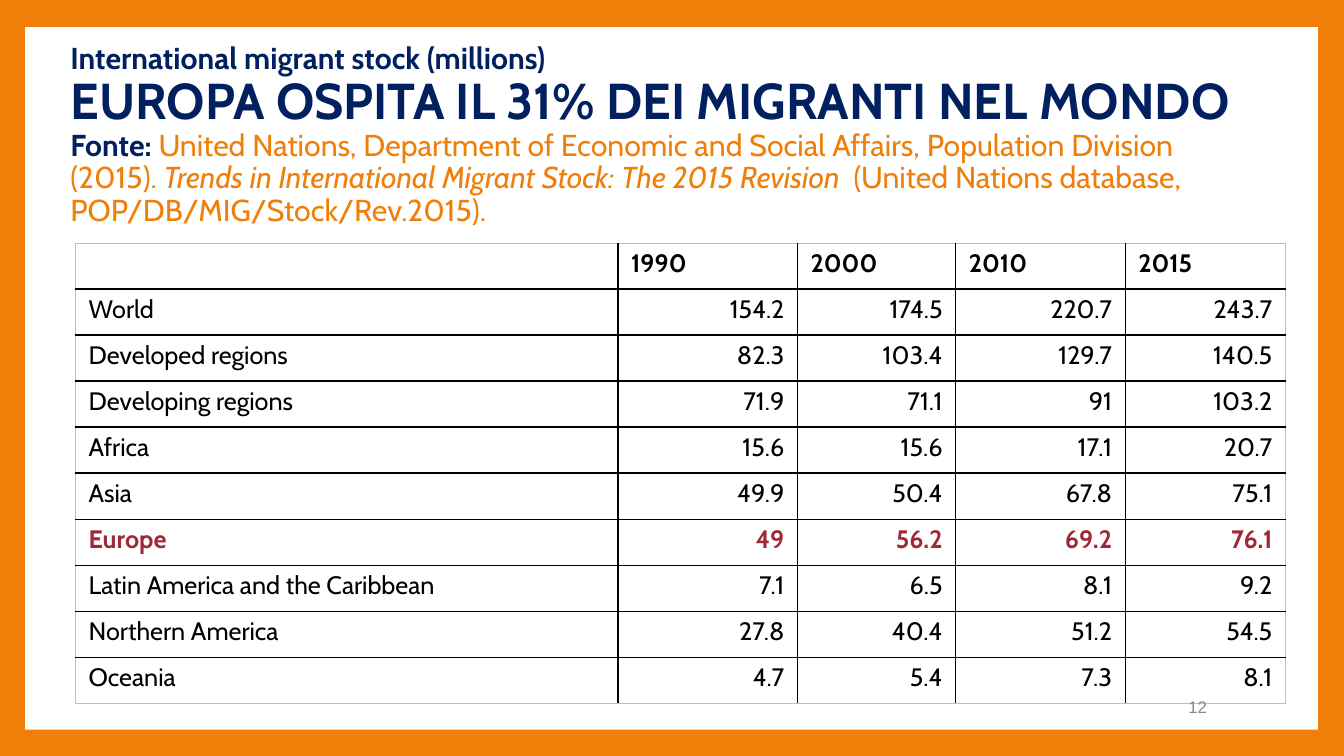
from lxml.etree import SubElement
from pptx import Presentation
from pptx.dml.color import RGBColor
from pptx.enum.shapes import MSO_SHAPE
from pptx.enum.text import MSO_ANCHOR, PP_ALIGN
from pptx.oxml.ns import qn
from pptx.util import Inches, Pt

ORANGE, NAVY, RED = "F07F09", "002060", "9F2936"
BLACK, WHITE, GREY = "000000", "FFFFFF", "898989"
EDGE = "BFBFBF"
ROW_HEIGHT = 0.457
COLUMN_WIDTHS = [5.38, 1.78, 1.57, 1.68, 1.59]
STOCK = [
    ("", "1990", "2000", "2010", "2015"),
    ("World", "154.2", "174.5", "220.7", "243.7"),
    ("Developed regions", "82.3", "103.4", "129.7", "140.5"),
    ("Developing regions", "71.9", "71.1", "91", "103.2"),
    ("Africa", "15.6", "15.6", "17.1", "20.7"),
    ("Asia", "49.9", "50.4", "67.8", "75.1"),
    ("Europe", "49", "56.2", "69.2", "76.1"),
    ("Latin America and the Caribbean", "7.1", "6.5", "8.1", "9.2"),
    ("Northern America", "27.8", "40.4", "51.2", "54.5"),
    ("Oceania", "4.7", "5.4", "7.3", "8.1"),
]


def rgb(value):
    return RGBColor.from_string(value)


def add_run(p, text, size=21.6, font="Cabin", color=BLACK, bold=False, italic=False):
    r = p.add_run()
    r.text = text
    r.font.size = Pt(size)
    r.font.name = font
    r.font.color.rgb = rgb(color)
    r.font.bold = bold
    r.font.italic = italic


def add_panel(s, left, top, width, height):
    sp = s.shapes.add_shape(MSO_SHAPE.RECTANGLE, Inches(left), Inches(top),
                            Inches(width), Inches(height))
    sp.shadow.inherit = False
    sp.fill.solid()
    sp.fill.fore_color.rgb = rgb(WHITE)
    sp.line.fill.background()


def add_text_box(s, left, top, width, height):
    tf = s.shapes.add_textbox(Inches(left), Inches(top),
                              Inches(width), Inches(height)).text_frame
    tf.word_wrap = True
    tf.vertical_anchor = MSO_ANCHOR.MIDDLE
    return tf


def add_heading(s):
    tf = add_text_box(s, 0.6, 0.88, 12, 1.26)
    tf.margin_bottom = Inches(0.38)
    p = tf.paragraphs[0]
    p.line_spacing = 0.9
    add_run(p, "International migrant stock (millions)", color=NAVY, bold=True)
    p.add_line_break()
    add_run(p, "EUROPA OSPITA IL 31% DEI MIGRANTI NEL MONDO", size=36, color=NAVY, bold=True)
    p.add_line_break()
    add_run(p, "Fonte: ", color=NAVY, bold=True)
    add_run(p, "United Nations, Department of Economic and Social Affairs, "
               "Population Division (2015). ", color=ORANGE)
    add_run(p, "Trends in International Migrant Stock: The 2015 Revision ",
            color=ORANGE, italic=True)
    add_run(p, " (United Nations database, POP/DB/MIG/Stock/Rev.2015).", color=ORANGE)


def set_borders(cell, outer):
    tcPr = cell._tc.get_or_add_tcPr()
    for index, side in enumerate(("lnL", "lnR", "lnT", "lnB")):
        width, color = (Pt(0.5), EDGE) if side in outer else (Pt(1), BLACK)
        ln = SubElement(tcPr, qn(f"a:{side}"), w=str(width))
        fill = SubElement(ln, qn("a:solidFill"))
        SubElement(fill, qn("a:srgbClr"), val=color)
        tcPr.insert(index, ln)


def fill_cell(cell, text, align, color, bold):
    cell.fill.solid()
    cell.fill.fore_color.rgb = rgb(WHITE)
    cell.margin_left = cell.margin_right = Inches(0.13)
    cell.margin_top = cell.margin_bottom = Inches(0.05)
    p = cell.text_frame.paragraphs[0]
    p.alignment = align
    if text:
        add_run(p, text, size=18, color=color, bold=bold)


def add_stock_table(s):
    last_row, last_col = len(STOCK) - 1, len(COLUMN_WIDTHS) - 1
    table = s.shapes.add_table(len(STOCK), len(COLUMN_WIDTHS), Inches(0.75), Inches(2.41),
                               Inches(12), Inches(ROW_HEIGHT * len(STOCK))).table
    table.horz_banding = False
    for column, width in zip(table.columns, COLUMN_WIDTHS):
        column.width = Inches(width)
    for i, values in enumerate(STOCK):
        table.rows[i].height = Inches(ROW_HEIGHT)
        europe = values[0] == "Europe"
        for j, text in enumerate(values):
            cell = table.cell(i, j)
            align = PP_ALIGN.RIGHT if i and j else PP_ALIGN.LEFT
            fill_cell(cell, text, align, RED if europe else BLACK, europe or i == 0)
            sides = {"lnL": j == 0, "lnR": j == last_col, "lnT": i == 0, "lnB": i == last_row}
            set_borders(cell, [side for side, is_outer in sides.items() if is_outer])


def add_page_number(s):
    p = add_text_box(s, 10.2, 6.81, 1.87, 0.4).paragraphs[0]
    p.alignment = PP_ALIGN.RIGHT
    add_run(p, "12", size=12, font="Arial", color=GREY)


def main():
    prs = Presentation()
    prs.slide_width, prs.slide_height = Inches(13.33), Inches(7.5)
    s = prs.slides.add_slide(prs.slide_layouts[6])
    s.background.fill.solid()
    s.background.fill.fore_color.rgb = rgb(ORANGE)
    add_panel(s, 0.25, 0.27, 12.82, 6.97)
    add_heading(s)
    add_stock_table(s)
    add_page_number(s)
    prs.save("out.pptx")


if __name__ == "__main__":
    main()
